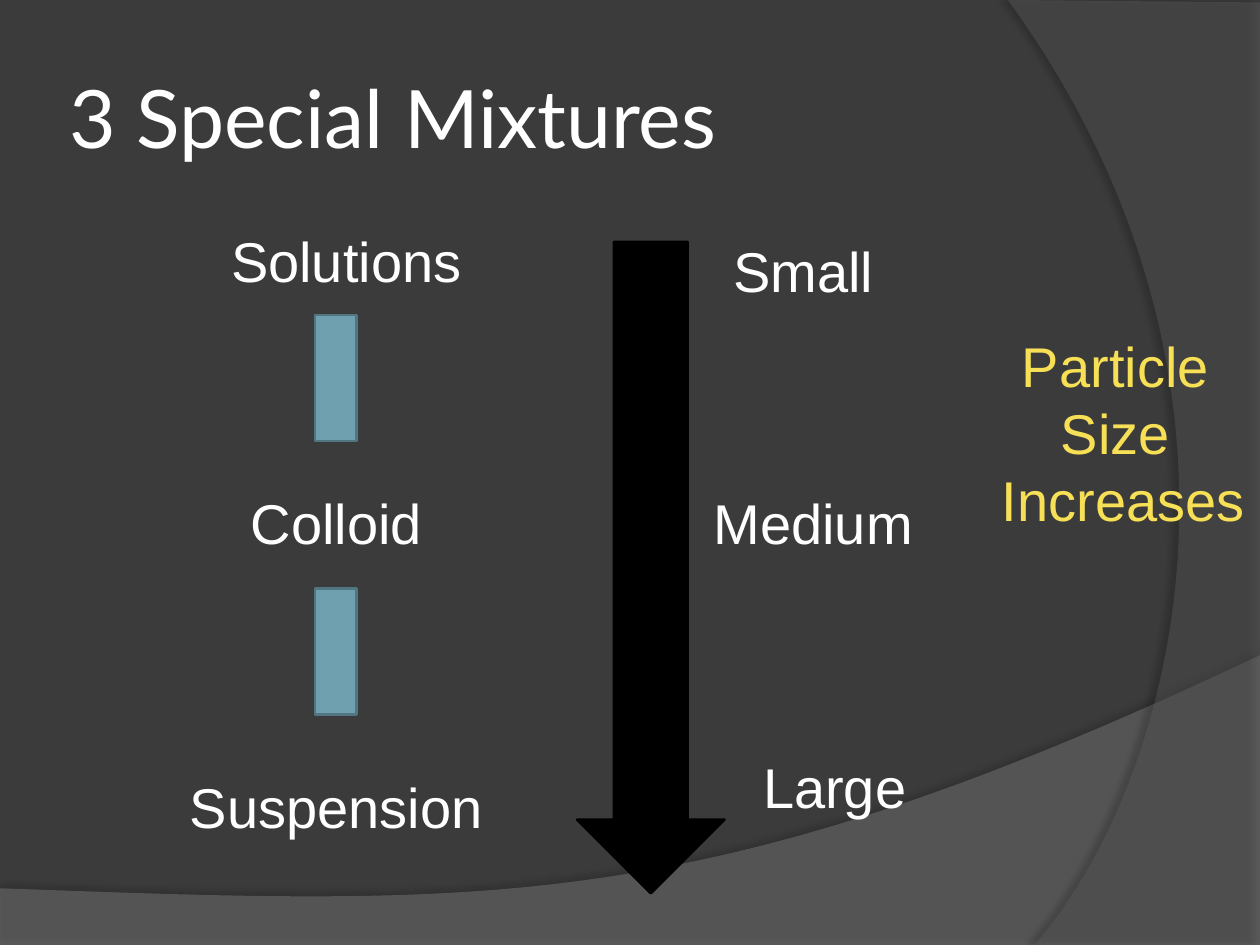
from lxml import etree
from pptx import Presentation
from pptx.dml.color import RGBColor
from pptx.enum.shapes import MSO_SHAPE
from pptx.enum.text import MSO_ANCHOR, MSO_AUTO_SIZE, PP_ALIGN
from pptx.oxml.ns import qn
from pptx.util import Inches, Pt

RECTANGLE = MSO_SHAPE.RECTANGLE
DOWN_ARROW = MSO_SHAPE.DOWN_ARROW
LEFT, CENTER = PP_ALIGN.LEFT, PP_ALIGN.CENTER
TOP, MIDDLE = MSO_ANCHOR.TOP, MSO_ANCHOR.MIDDLE
GROW, FIXED = MSO_AUTO_SIZE.SHAPE_TO_FIT_TEXT, MSO_AUTO_SIZE.NONE

COLORS = {
    "background": "3B3B3B",
    "lower_wave": "7F7F7F",
    "right_wave": "5E5E5E",
    "text": "FFFFFF",
    "highlight": "F7DF56",
    "bar": "6EA0B0",
    "bar_line": "517682",
    "black": "000000",
}


def curve(start, control_1, control_2, end, steps=60):
    """Return points along a cubic curve, without its start."""
    points = []
    for step in range(1, steps + 1):
        t = step / steps
        weights = ((1 - t) ** 3, 3 * t * (1 - t) ** 2, 3 * t * t * (1 - t), t ** 3)
        corners = (start, control_1, control_2, end)
        points.append(tuple(sum(w * c[axis] for w, c in zip(weights, corners))
                            for axis in (0, 1)))
    return points


class SlideBuilder:
    """Hold the style and the current slide, and add elements to it."""

    def __init__(self, slide):
        self.slide = slide
        self.label_font = {"name": "Arial", "size": Pt(32)}
        self.title_font = {"name": "Lato", "size": Pt(46)}
        self.line_width = Pt(1.5)

    def color(self, name):
        return RGBColor.from_string(COLORS[name])

    def background(self, name):
        fill = self.slide.background.fill
        fill.solid()
        fill.fore_color.rgb = self.color(name)

    def wave(self, points, fill, opacity, shadow):
        corners = [(Inches(x), Inches(y)) for x, y in points]
        builder = self.slide.shapes.build_freeform(*corners[0])
        builder.add_line_segments(corners[1:], close=True)
        shape = builder.convert_to_shape()
        shape.fill.solid()
        shape.fill.fore_color.rgb = self.color(fill)
        shape.line.fill.background()
        shape.shadow.inherit = False
        properties = shape.fill._xPr
        fill_color = properties.find(qn("a:solidFill"))[0]
        etree.SubElement(fill_color, qn("a:alpha"), val=str(opacity * 1000))
        shadow_opacity, blur, distance, angle = shadow
        outer = etree.SubElement(
            properties.find(qn("a:effectLst")), qn("a:outerShdw"),
            blurRad=str(Pt(blur)), dist=str(Pt(distance)),
            dir=str(angle * 60000), algn="ctr", rotWithShape="0")
        shadow_color = etree.SubElement(outer, qn("a:srgbClr"), val=COLORS["black"])
        etree.SubElement(shadow_color, qn("a:alpha"), val=str(shadow_opacity * 1000))

    def text(self, lines, left, top, width, height, font, color="text",
             alignment=CENTER, side_margin=0.1, anchor=TOP, auto_size=GROW):
        shape = self.slide.shapes.add_textbox(
            Inches(left), Inches(top), Inches(width), Inches(height))
        frame = shape.text_frame
        frame_format = {
            "word_wrap": True, "auto_size": auto_size, "vertical_anchor": anchor,
            "margin_left": Inches(side_margin), "margin_right": Inches(side_margin),
            "margin_top": Inches(0.05), "margin_bottom": Inches(0.05),
        }
        for name, value in frame_format.items():
            setattr(frame, name, value)
        frame.text = "\n".join(lines)
        for paragraph in frame.paragraphs:
            paragraph.alignment = alignment
            run_font = paragraph.runs[0].font
            for name, value in font.items():
                setattr(run_font, name, value)
            run_font.color.rgb = self.color(color)

    def label(self, lines, left, top, width, height=0.64, color="text"):
        self.text(lines, left, top, width, height, self.label_font, color)

    def title(self, words):
        self.text([words], 0.5, 0.3, 8.17, 1.25, self.title_font,
                  alignment=LEFT, side_margin=0.05, anchor=MIDDLE, auto_size=FIXED)

    def shape(self, kind, left, top, width, height, fill, line):
        shape = self.slide.shapes.add_shape(
            kind, Inches(left), Inches(top), Inches(width), Inches(height))
        shape.shadow.inherit = False
        shape.fill.solid()
        shape.fill.fore_color.rgb = self.color(fill)
        shape.line.color.rgb = self.color(line)
        shape.line.width = self.line_width


def main():
    presentation = Presentation()
    presentation.slide_width = Inches(10)
    presentation.slide_height = Inches(7.5)
    builder = SlideBuilder(presentation.slides.add_slide(presentation.slide_layouts[6]))
    builder.background("background")

    lower_edge = curve((10, 5.2), (5.59, 7.29), (3.91, 7.19), (0, 7.05))
    builder.wave([(0, 7.05), (0, 7.51), (10, 7.51), (10, 5.2)] + lower_edge[:-1],
                 "lower_wave", 45, (35, 4, 3.5, 270))
    right_edge = curve((8.21, 7.5), (9.35, 6.19), (10.18, 3), (8, 0))
    builder.wave([(10, 0.02), (10, 7.5), (8.21, 7.5)] + right_edge,
                 "right_wave", 40, (45, 4, 4, 180))

    builder.title("3 Special Mixtures")
    for words, left, top in (("Solutions", 1, 1.75), ("Colloid", 0.92, 3.83),
                             ("Suspension", 0.92, 6.08)):
        builder.label([words], left, top, 3.5)
    for top in (2.5, 4.67):
        builder.shape(RECTANGLE, 2.5, top, 0.33, 1, "bar", "bar_line")
    builder.label(["Particle ", "Size ", "Increases"], 7.83, 2.58, 2.17, 1.72,
                  "highlight")
    for words, left, top in (("Small", 5.25, 1.83), ("Medium", 5.33, 3.83),
                             ("Large", 5.5, 5.92)):
        builder.label([words], left, top, 2.25)
    builder.shape(DOWN_ARROW, 4.58, 1.92, 1.17, 5.17, "black", "black")

    presentation.save("out.pptx")


if __name__ == "__main__":
    main()
